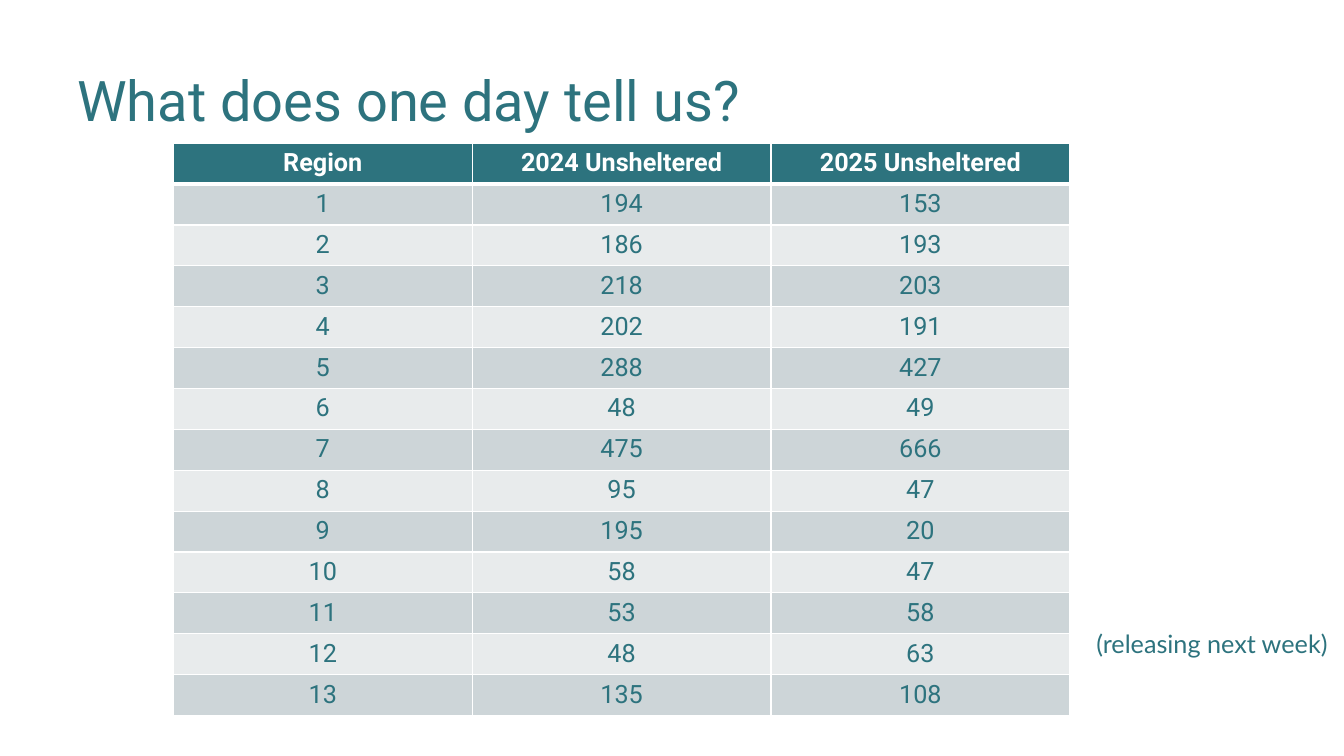
import pptx
import pptx.dml.color
import pptx.enum.text
import pptx.oxml
import pptx.oxml.ns
import pptx.util

Cm = pptx.util.Cm
Pt = pptx.util.Pt
PP_ALIGN = pptx.enum.text.PP_ALIGN
MSO_ANCHOR = pptx.enum.text.MSO_ANCHOR

COLUMNS = ["Region", "2024 Unsheltered", "2025 Unsheltered"]
UNSHELTERED_2024 = [194, 186, 218, 202, 288, 48, 475, 95, 195, 58, 53, 48, 135]
UNSHELTERED_2025 = [153, 193, 203, 191, 427, 49, 666, 47, 20, 47, 58, 63, 108]


def color(hex_string):
    return pptx.dml.color.RGBColor.from_string(hex_string)


class SlideBuilder:
    TEAL = "2D737E"
    WHITE = "FFFFFF"
    BANDS = ["CDD5D8", "E8EBEC"]

    def __init__(self, s):
        self.s = s

    def add_line(self, tf, text, align=PP_ALIGN.LEFT, rgb=TEAL, **fmt):
        p = tf.paragraphs[0]
        p.alignment = align
        r = p.add_run()
        r.text = text
        r.font.color.rgb = color(rgb)
        for name, value in fmt.items():
            setattr(r.font, name, value)

    def text(self, text, left, top, width, height, frame, **fmt):
        sp = self.s.shapes.add_textbox(Cm(left), Cm(top), Cm(width), Cm(height))
        tf = sp.text_frame
        for name, value in frame.items():
            setattr(tf, name, value)
        self.add_line(tf, text, **fmt)

    def border(self, cell, side, width):
        ns = pptx.oxml.ns.nsdecls("a")
        cell._tc.get_or_add_tcPr().append(pptx.oxml.parse_xml(
            f'<a:ln{side} {ns} w="{Pt(width)}"><a:solidFill>'
            f'<a:srgbClr val="{self.WHITE}"/></a:solidFill></a:ln{side}>'))

    def table(self, rows, left, top, col_width, row_height):
        n_rows, n_cols = len(rows), len(rows[0])
        table = self.s.shapes.add_table(
            n_rows, n_cols, Cm(left), Cm(top),
            Cm(col_width * n_cols), Cm(row_height * n_rows)).table
        for col in table.columns:
            col.width = Cm(col_width)
        for i, values in enumerate(rows):
            table.rows[i].height = Cm(row_height)
            header = i == 0
            for j, value in enumerate(values):
                cell = table.cell(i, j)
                # Heavier rule between the header and the first region
                widths = {"L": 1, "R": 1, "T": 3 if i == 1 else 1,
                          "B": 3 if header else 1}
                for side, width in widths.items():
                    self.border(cell, side, width)
                cell.fill.solid()
                cell.fill.fore_color.rgb = color(
                    self.TEAL if header else self.BANDS[(i - 1) % 2])
                self.add_line(cell.text_frame, str(value), PP_ALIGN.CENTER,
                              self.WHITE if header else self.TEAL,
                              name="Roboto", size=Pt(18), bold=header)


def main():
    prs = pptx.Presentation()
    prs.slide_width, prs.slide_height = Cm(33.87), Cm(19.05)
    slide = SlideBuilder(prs.slides.add_slide(prs.slide_layouts[6]))

    # Title
    slide.text("What does one day tell us?", 1.7, 0.76, 27.94, 2.84,
               {"word_wrap": True, "vertical_anchor": MSO_ANCHOR.BOTTOM,
                "margin_bottom": Cm(0.25)},
               name="Roboto", size=Pt(40))

    # Counts by region
    counts = zip(UNSHELTERED_2024, UNSHELTERED_2025)
    rows = [COLUMNS] + [[region, *pair] for region, pair in enumerate(counts, 1)]
    slide.table(rows, 4.37, 3.61, 7.53, 1.03)

    # Release note
    slide.text("(releasing next week)", 27.38, 15.7, 6.48, 1.02,
               {"word_wrap": False}, name="Lato", size=Pt(18))

    prs.save("out.pptx")


if __name__ == "__main__":
    main()
